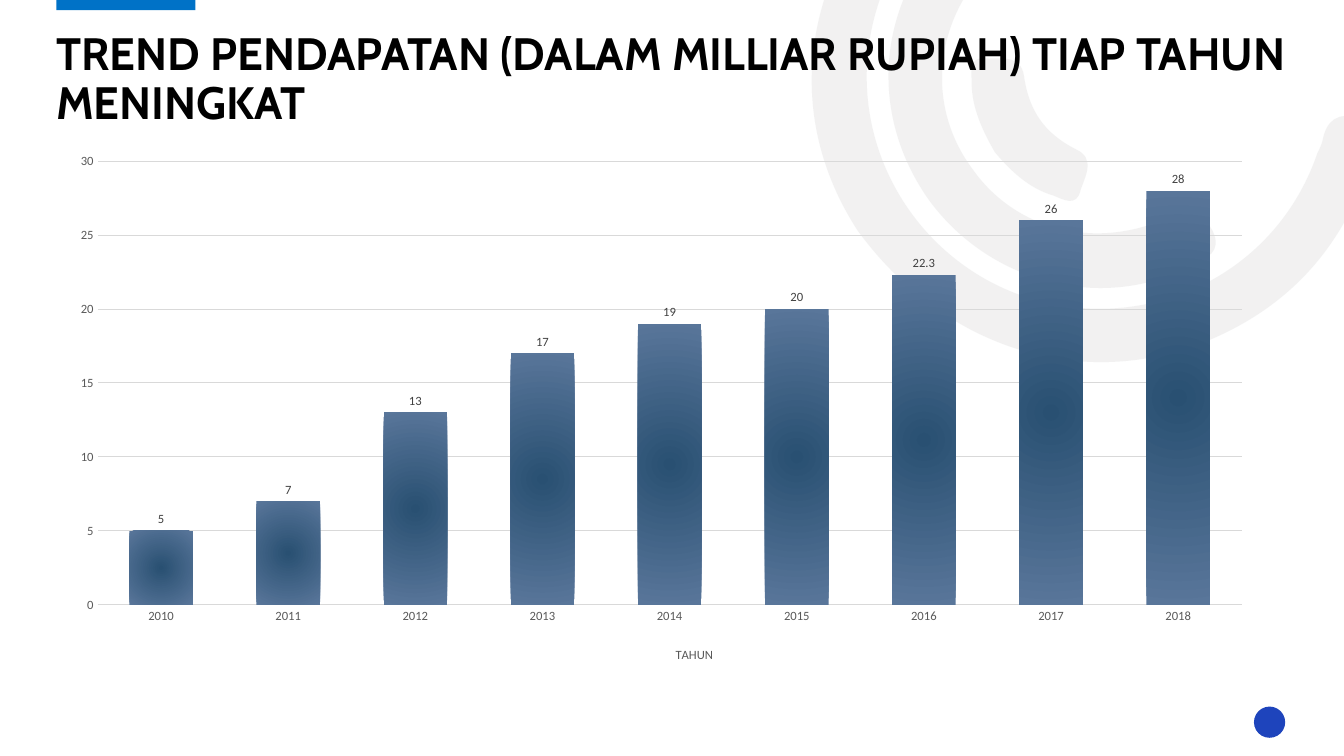
"""Build the yearly revenue trend slide with a column chart."""
from dataclasses import dataclass
from itertools import chain

from lxml.etree import Element, SubElement
from pptx import Presentation
from pptx.chart.data import CategoryChartData
from pptx.dml.color import RGBColor
from pptx.enum.chart import XL_CHART_TYPE, XL_LABEL_POSITION, XL_TICK_MARK
from pptx.enum.shapes import MSO_SHAPE
from pptx.enum.text import MSO_ANCHOR, MSO_AUTO_SIZE, PP_ALIGN
from pptx.oxml.ns import qn
from pptx.util import Emu, Inches, Pt

WIDTH, HEIGHT = Inches(40 / 3), Inches(7.5)
COLUMNS, ROWS = 40 / 3, 7.5
COLORS = {
    "arc": "E7E6E6", "tab": "0072C7", "dot": "1E44BC", "title": "000000",
    "axis_text": "595959", "label": "404040", "line": "D9D9D9",
    "bar_center": "295072", "bar_edge": "59769A",
}
REVENUE = dict(zip(range(2010, 2019), (5, 7, 13, 17, 19, 20, 22.3, 26, 28)))

Point = tuple[float, float]


@dataclass(frozen=True)
class Box:
    col: float
    row: float
    cols: float
    rows: float

    def emu(self) -> tuple[Emu, Emu, Emu, Emu]:
        return x(self.col), y(self.row), x(self.cols), y(self.rows)


@dataclass(frozen=True)
class Mark:
    kind: MSO_SHAPE
    box: Box
    color: str


@dataclass(frozen=True)
class Arc:
    start: Point
    curves: tuple[tuple[float, float, float, float, float, float], ...]


TITLE_BOX = Box(0.56, 0.27, 12.22, 1.01)
CHART_BOX = Box(0.56, 1.42, 12, 5.26)
PLOT_LAYOUT = {"layoutTarget": "inner", "xMode": "edge", "yMode": "edge",
               "x": 0.034, "y": 0.034, "w": 0.946, "h": 0.837}
AXIS_TITLE_LAYOUT = {"xMode": "edge", "yMode": "edge", "x": 0.51, "y": 0.945}
MARKS = (
    Mark(MSO_SHAPE.RECTANGLE, Box(0.56, -0.02, 1.38, 0.12), "tab"),
    Mark(MSO_SHAPE.OVAL, Box(12.44, 7.01, 0.31, 0.31), "dot"),
)
ARCS = (
    Arc((8.51, 2.29), (
        (7.99, 1.49, 7.87, 0.5, 8.38, -0.5),
        (8.9, -1.52, 9.76, -2.03, 10.9, -2.07),
        (11.05, -2.07, 11.21, -2.1, 11.31, -1.95),
        (11.44, -1.75, 11.27, -1.54, 10.98, -1.54),
        (9.67, -1.54, 8.65, -0.59, 8.6, 0.68),
        (8.56, 1.81, 9.36, 2.81, 10.46, 3.02),
        (11.6, 3.24, 12.7, 2.61, 13.07, 1.52),
        (13.09, 1.48, 13.11, 1.44, 13.12, 1.4),
        (13.16, 1.19, 13.27, 1.11, 13.49, 1.17),
        (13.73, 1.24, 13.67, 1.41, 13.61, 1.56),
        (13.34, 2.45, 12.78, 3.07, 11.91, 3.41),
        (10.7, 3.87, 9.36, 3.45, 8.51, 2.29),
    )),
    Arc((9.22, 1.99), (
        (8.62, 1.15, 8.69, 0.07, 9.4, -0.68),
        (9.51, -0.79, 9.62, -0.95, 9.8, -0.78),
        (9.95, -0.64, 9.97, -0.5, 9.79, -0.32),
        (9.25, 0.26, 9.2, 1.08, 9.65, 1.68),
        (10.08, 2.29, 10.88, 2.49, 11.61, 2.15),
        (11.82, 2.05, 11.93, 2.12, 12.03, 2.29),
        (12.13, 2.5, 11.97, 2.56, 11.83, 2.63),
        (10.96, 3.1, 9.83, 2.82, 9.22, 1.99),
    )),
    Arc((9.87, 1.51), (
        (9.75, 1.3, 9.64, 1.07, 9.64, 0.82),
        (9.64, 0.73, 9.61, 0.57, 9.76, 0.58),
        (9.92, 0.59, 10.13, 0.53, 10.16, 0.76),
        (10.21, 1.1, 10.36, 1.32, 10.67, 1.48),
        (10.88, 1.57, 10.76, 1.76, 10.72, 1.89),
        (10.68, 2.06, 10.55, 1.98, 10.45, 1.94),
        (10.21, 1.87, 10.03, 1.7, 9.87, 1.51),
    )),
)


def x(cols: float) -> Emu:
    return Emu(round(WIDTH * cols / COLUMNS))


def y(rows: float) -> Emu:
    return Emu(round(HEIGHT * rows / ROWS))


def rgb(name: str) -> RGBColor:
    return RGBColor.from_string(COLORS[name])


def paint(sp, color: str) -> None:
    sp.shadow.inherit = False
    sp.fill.solid()
    sp.fill.fore_color.rgb = rgb(color)
    sp.line.fill.background()


def style_font(font, size: float, color: str, name: str = "Calibri", bold: bool = False) -> None:
    font.size, font.name, font.bold = Pt(size), name, bold
    font.color.rgb = rgb(color)


def draw_arc(s, arc: Arc) -> None:
    flat = list(chain(arc.start, *arc.curves))
    first, *rest = [(x(px), y(py)) for px, py in zip(flat[::2], flat[1::2])]
    builder = s.shapes.build_freeform(*first)
    builder.add_line_segments(rest, close=False)
    sp = builder.convert_to_shape()
    paint(sp, "arc")
    SubElement(next(sp.element.iter(qn("a:srgbClr"))), qn("a:alpha"), val="53000")
    outline = next(sp.element.iter(qn("a:path")))
    lines = outline.findall(qn("a:lnTo"))
    for i in range(0, len(lines), 3):
        curve = SubElement(outline, qn("a:cubicBezTo"))
        for line in lines[i:i + 3]:
            curve.append(line[0])
            outline.remove(line)
    SubElement(outline, qn("a:close"))


def draw_mark(s, mark: Mark) -> None:
    paint(s.shapes.add_shape(mark.kind, *mark.box.emu()), mark.color)


def draw_title(s) -> None:
    sp = s.shapes.title
    sp.element.getparent().append(sp.element)
    sp.left, sp.top, sp.width, sp.height = TITLE_BOX.emu()
    tf = sp.text_frame
    tf.margin_left = tf.margin_top = tf.margin_right = tf.margin_bottom = 0
    tf.word_wrap, tf.auto_size = True, MSO_AUTO_SIZE.NONE
    tf.vertical_anchor = MSO_ANCHOR.BOTTOM
    p = tf.paragraphs[0]
    p.alignment, p.line_spacing = PP_ALIGN.LEFT, 0.9
    r = p.add_run()
    r.text = "TREND PENDAPATAN (DALAM MILLIAR RUPIAH) TIAP TAHUN MENINGKAT"
    style_font(r.font, 32.4, "title", "Cabin", True)


def place(parent, index: int, settings: dict[str, str | float]) -> None:
    for old in parent.findall(qn("c:layout")):
        parent.remove(old)
    layout = Element(qn("c:layout"))
    manual = SubElement(layout, qn("c:manualLayout"))
    for name, value in settings.items():
        SubElement(manual, qn(f"c:{name}"), val=str(value))
    parent.insert(index, layout)


def fill_bars(chart, fill) -> None:
    fill.gradient()
    for stop, color, position in zip(fill.gradient_stops, ("bar_center", "bar_edge"), (0, 1)):
        stop.color.rgb, stop.position = rgb(color), position
    gradient = next(chart.element.iter(qn("a:gradFill")))
    gradient.remove(gradient.find(qn("a:lin")))
    circle = SubElement(gradient, qn("a:path"), path="circle")
    SubElement(circle, qn("a:fillToRect"), dict.fromkeys("ltrb", "100000"))


def draw_chart(s) -> None:
    data = CategoryChartData()
    data.categories = [str(year) for year in REVENUE]
    data.add_series("Series 1", REVENUE.values())
    chart = s.shapes.add_chart(XL_CHART_TYPE.COLUMN_CLUSTERED, *CHART_BOX.emu(), data).chart
    chart.has_legend = chart.has_title = False
    style_font(chart.font, 10, "title")

    years, amounts = chart.category_axis, chart.value_axis
    for axis in (years, amounts):
        axis.major_tick_mark = axis.minor_tick_mark = XL_TICK_MARK.NONE
        style_font(axis.tick_labels.font, 9, "axis_text")
    years.format.line.color.rgb, years.format.line.width = rgb("line"), Pt(1)
    r = years.axis_title.text_frame.paragraphs[0].add_run()
    r.text = "TAHUN"
    style_font(r.font, 9, "axis_text")
    amounts.minimum_scale, amounts.maximum_scale, amounts.major_unit = 0, 30, 5
    amounts.format.line.fill.background()
    grid = amounts.major_gridlines.format.line
    grid.color.rgb, grid.width = rgb("line"), Pt(0.75)
    place(next(chart.element.iter(qn("c:plotArea"))), 0, PLOT_LAYOUT)
    place(years.axis_title.element, 1, AXIS_TITLE_LAYOUT)

    plot = chart.plots[0]
    plot.gap_width, plot.overlap, plot.vary_by_categories = 100, -24, False
    bars = plot.series[0]
    fill_bars(chart, bars.format.fill)
    labels = bars.data_labels
    labels.show_value, labels.position = True, XL_LABEL_POSITION.OUTSIDE_END
    style_font(labels.font, 9, "label")


def main() -> None:
    prs = Presentation()
    prs.slide_width, prs.slide_height = WIDTH, HEIGHT
    s = prs.slides.add_slide(prs.slide_layouts[5])
    for arc in ARCS:
        draw_arc(s, arc)
    for mark in MARKS:
        draw_mark(s, mark)
    draw_title(s)
    draw_chart(s)
    prs.save("out.pptx")


if __name__ == "__main__":
    main()
